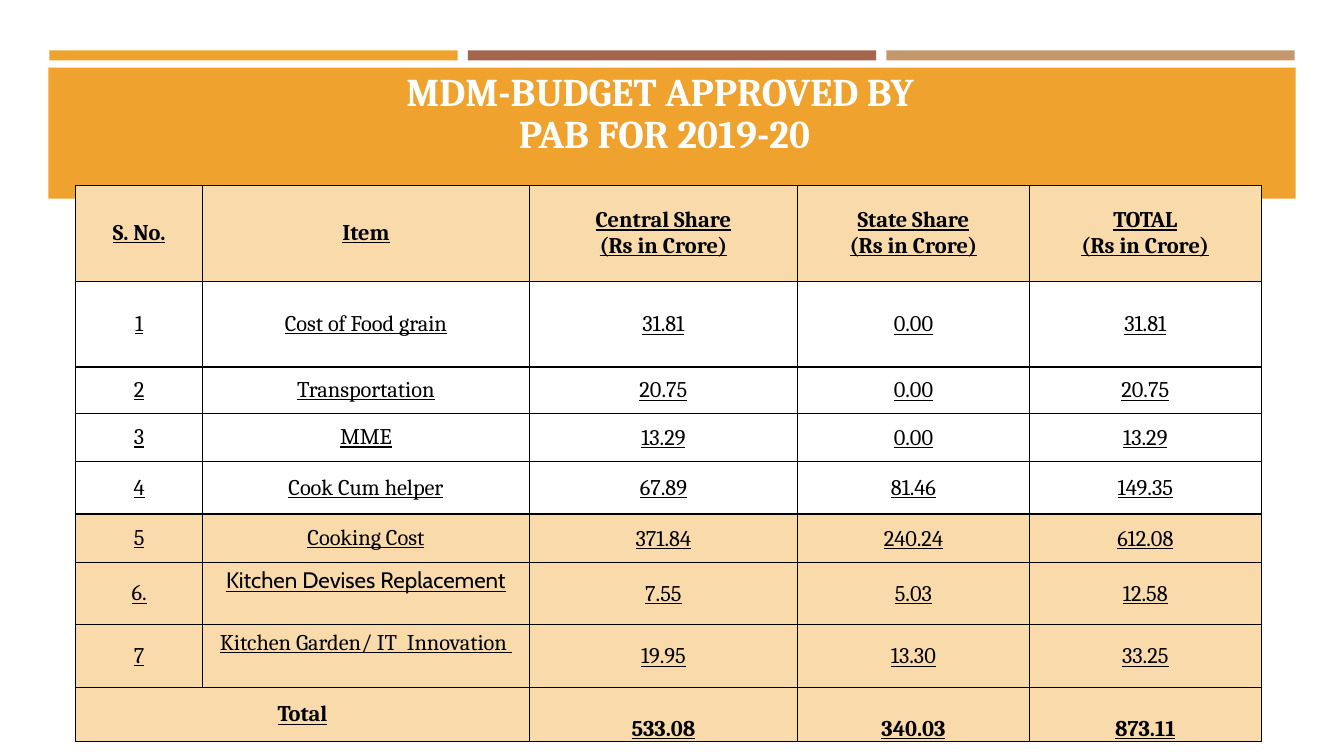
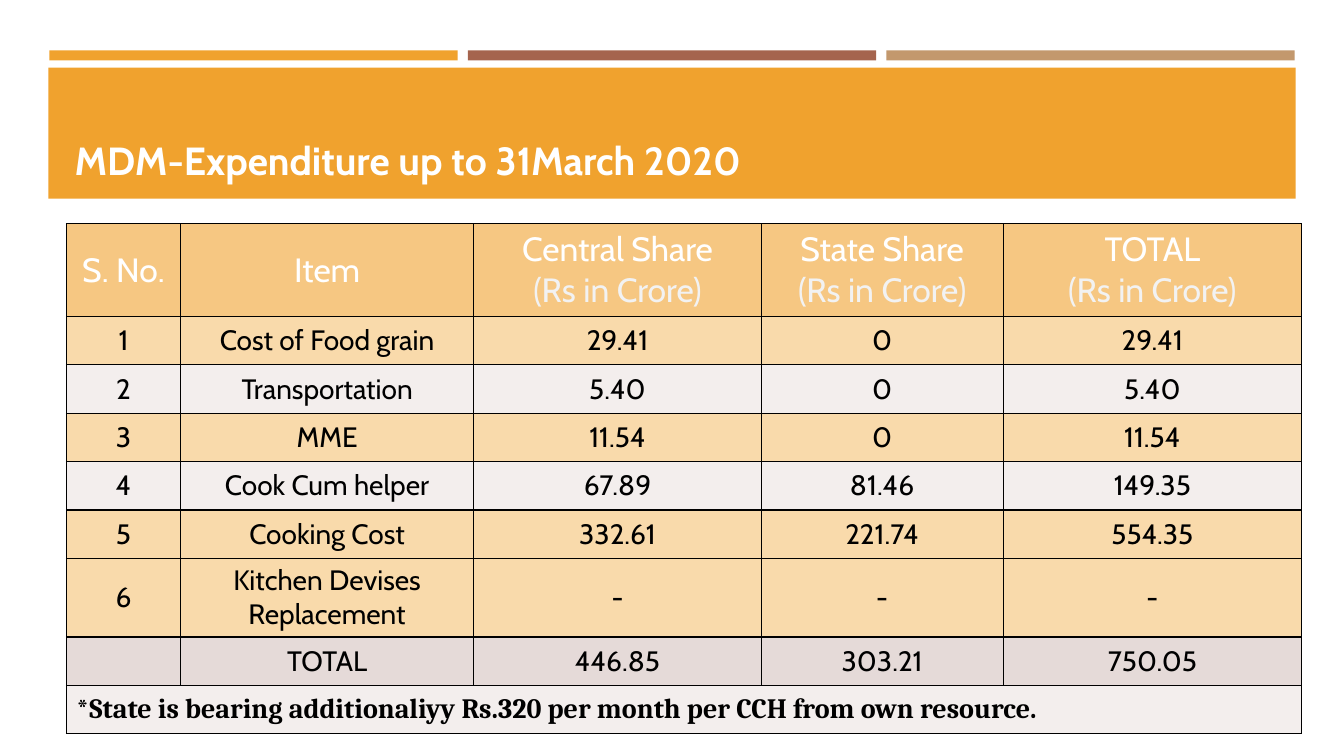
from dataclasses import dataclass, field
from typing import Any, Optional

from lxml import etree
from pptx import Presentation
from pptx.dml.color import RGBColor
from pptx.enum.shapes import MSO_SHAPE
from pptx.enum.text import MSO_ANCHOR as ANCHOR, MSO_AUTO_SIZE, PP_ALIGN as ALIGN
from pptx.oxml.ns import qn
from pptx.util import Inches, Pt

ORANGE, BROWN, TAN = "F0A22E", "A5644E", "C3986D"
PEACH, APRICOT, MIST, ROSE = "F9DAAB", "F6C782", "F3EEED", "E5DAD8"
WHITE, BLACK, OFF_WHITE = "FFFFFF", "000000", "F2F2F2"
SERIF, SANS = "Cambria", "Cabin"

Format = dict[str, Any]
Row = tuple[Optional[str], ...]


@dataclass
class Band:
    left: float
    top: float
    width: float
    height: float
    color: str


@dataclass
class Title:
    text: str
    left: float
    top: float
    font: str
    align: ALIGN


@dataclass
class RowStyle:
    height: float
    fill: str
    fmt: Format = field(default_factory=dict)


@dataclass
class TableSpec:
    """A None in a row continues the cell to its left."""
    left: float
    top: float
    widths: list[float]
    rows: list[Row]
    styles: list[RowStyle]
    fmt: Format
    unit_color: str
    number_margins: Optional[tuple[float, ...]] = None
    cell_formats: dict[tuple[int, int], Format] = field(default_factory=dict)
    cell_layouts: dict[tuple[int, int], Format] = field(default_factory=dict)


STRIPE_W, STRIPE_STEP = 4.05, 4.15
BANDS = [Band(0.49 + i * STRIPE_STEP, 0.5, STRIPE_W, 0.1, color)
         for i, color in enumerate((ORANGE, BROWN, TAN))]
BANDS.append(Band(0.48, 0.67, 12.37, 1.3, ORANGE))

HEADER: Row = ("S. No.", "Item", "Central Share\n(Rs in Crore)",
               "State Share\n(Rs in Crore)", "TOTAL\n(Rs in Crore)")

BOLD: Format = {"bold": True}
BUDGET = TableSpec(
    left=0.75, top=1.84, widths=[1.26, 3.24, 2.66, 2.3, 2.3],
    rows=[
        HEADER,
        ("1", "Cost of Food grain", "31.81", "0.00", "31.81"),
        ("2", "Transportation", "20.75", "0.00", "20.75"),
        ("3", "MME", "13.29", "0.00", "13.29"),
        ("4", "Cook Cum helper", "67.89", "81.46", "149.35"),
        ("5", "Cooking Cost", "371.84", "240.24", "612.08"),
        ("6.", "Kitchen Devises Replacement", "7.55", "5.03", "12.58"),
        ("7", "Kitchen Garden/ IT  Innovation ", "19.95", "13.30", "33.25"),
        ("Total", None, "533.08", "340.03", "873.11"),
    ],
    styles=[RowStyle(0.95, PEACH, BOLD),
            *(RowStyle(h, WHITE) for h in (0.85, 0.46, 0.48, 0.52)),
            *(RowStyle(h, PEACH) for h in (0.48, 0.62, 0.62)),
            RowStyle(0.54, PEACH, BOLD)],
    fmt={"name": SERIF, "size": Pt(16), "underline": True, "color": BLACK},
    unit_color=BLACK,
    number_margins=(0.01, 0.01, 0.01, 0),
    cell_formats={(6, 1): {"name": SANS}},
    cell_layouts={(6, 1): {"vertical_anchor": ANCHOR.TOP},
                  (7, 1): {"vertical_anchor": ANCHOR.TOP},
                  **{(8, c): {"vertical_anchor": ANCHOR.BOTTOM} for c in (2, 3, 4)}},
)

NOTE = "*State is bearing additionaliyy Rs.320 per month per CCH from own resource."
EXPENDITURE = TableSpec(
    left=0.66, top=2.22, widths=[1.13, 2.91, 2.85, 2.4, 2.96],
    rows=[
        HEADER,
        ("1", "Cost of Food grain", "29.41", "0", "29.41"),
        ("2", "Transportation", "5.40", "0", "5.40"),
        ("3", "MME", "11.54", "0", "11.54"),
        ("4", "Cook Cum helper", "67.89", "81.46", "149.35"),
        ("5", "Cooking Cost", "332.61", "221.74", "554.35"),
        ("6", "Kitchen Devises Replacement", "-", "-", "-"),
        ("", "TOTAL", "446.85", "303.21", "750.05"),
        (NOTE, None, None, None, None),
    ],
    styles=[RowStyle(0.92, APRICOT, {"size": Pt(24), "color": WHITE}),
            *(RowStyle(0.48, PEACH if i % 2 == 0 else MIST) for i in range(5)),
            RowStyle(0.78, PEACH), RowStyle(0.48, ROSE),
            RowStyle(0.48, MIST, {"name": SERIF, "bold": True, "align": ALIGN.LEFT})],
    fmt={"name": SANS, "size": Pt(20), "color": BLACK},
    unit_color=OFF_WHITE,
)

SLIDES = [
    (Title("MDM-BUDGET APPROVED BY \vPAB FOR 2019-20", 0.56, 0.5, SERIF, ALIGN.CENTER),
     BUDGET),
    (Title("MDM-Expenditure up to 31March 2020", 0.64, 0.77, SANS, ALIGN.LEFT),
     EXPENDITURE),
]


def set_fill(target: Any, color: str) -> None:
    target.fill.solid()
    target.fill.fore_color.rgb = RGBColor.from_string(color)


def format_paragraph(p: Any, fmt: Format) -> None:
    p.alignment = fmt.get("align", ALIGN.CENTER)
    for r in p.runs:
        for name in ("name", "size", "bold", "underline"):
            setattr(r.font, name, fmt.get(name, False))
        r.font.color.rgb = RGBColor.from_string(fmt["color"])


def add_bands(slide: Any, layout: Any) -> None:
    """Draw the bands and move them behind the layout's placeholders."""
    for i, band in enumerate(BANDS):
        sp = slide.shapes.add_shape(
            MSO_SHAPE.RECTANGLE,
            *(Inches(v) for v in (band.left, band.top, band.width, band.height)))
        sp.shadow.inherit = False
        set_fill(sp, band.color)
        sp.line.fill.background()
        sp.element.nvSpPr.cNvPr.set("id", str(100 + i))
        sp.name = f"Band {i + 1}"
        layout.shapes.element.insert(2 + i, sp.element)


def set_title(slide: Any, title: Title) -> None:
    sp = slide.shapes.title
    sp.left, sp.top = Inches(title.left), Inches(title.top)
    sp.width, sp.height = Inches(12.06), Inches(1.11)
    tf = sp.text_frame
    tf.text = title.text
    tf.word_wrap = True
    tf.auto_size = MSO_AUTO_SIZE.NONE
    tf.vertical_anchor = ANCHOR.BOTTOM
    p = tf.paragraphs[0]
    p.line_spacing = 0.9
    format_paragraph(p, {"name": title.font, "size": Pt(28), "bold": True,
                         "color": WHITE, "align": title.align})


def set_borders(cell: Any) -> None:
    tc_pr = cell._tc.get_or_add_tcPr()
    for i, side in enumerate(("lnL", "lnR", "lnT", "lnB")):
        ln = etree.Element(qn(f"a:{side}"), w=str(Pt(1)))
        fill = etree.SubElement(ln, qn("a:solidFill"))
        etree.SubElement(fill, qn("a:srgbClr"), val=BLACK)
        tc_pr.insert(i, ln)


def fill_cell(cell: Any, text: str, row: int, col: int, spec: TableSpec) -> None:
    layout = {"vertical_anchor": ANCHOR.MIDDLE}
    if spec.number_margins and row > 0 and col > 1:
        sides = ("margin_left", "margin_top", "margin_right", "margin_bottom")
        layout |= {s: Inches(v) for s, v in zip(sides, spec.number_margins)}
    layout |= spec.cell_layouts.get((row, col), {})
    for name, value in layout.items():
        setattr(cell, name, value)
    cell.text = text
    fmt = spec.fmt | spec.styles[row].fmt | spec.cell_formats.get((row, col), {})
    for i, p in enumerate(cell.text_frame.paragraphs):
        format_paragraph(p, fmt | {"color": spec.unit_color} if i else fmt)


def add_table(slide: Any, spec: TableSpec) -> None:
    heights = [style.height for style in spec.styles]
    table = slide.shapes.add_table(
        len(spec.rows), len(spec.widths), Inches(spec.left), Inches(spec.top),
        Inches(sum(spec.widths)), Inches(sum(heights))).table
    table.first_row = table.horz_banding = False
    for column, width in zip(table.columns, spec.widths):
        column.width = Inches(width)
    for r, (values, style) in enumerate(zip(spec.rows, spec.styles)):
        table.rows[r].height = Inches(style.height)
        for c, text in enumerate(values):
            cell = table.cell(r, c)
            set_fill(cell, style.fill)
            set_borders(cell)
            if text is not None:
                fill_cell(cell, text, r, c, spec)
        if None in values:
            first = values.index(None) - 1
            table.cell(r, first).merge(table.cell(r, first + values.count(None)))


def main() -> None:
    prs = Presentation()
    prs.slide_width, prs.slide_height = Inches(13.33), Inches(7.5)
    layout = prs.slide_layouts[5]
    for i, (title, spec) in enumerate(SLIDES):
        slide = prs.slides.add_slide(layout)
        if i == 0:
            add_bands(slide, layout)
        set_title(slide, title)
        add_table(slide, spec)
    prs.save("out.pptx")


if __name__ == "__main__":
    main()
